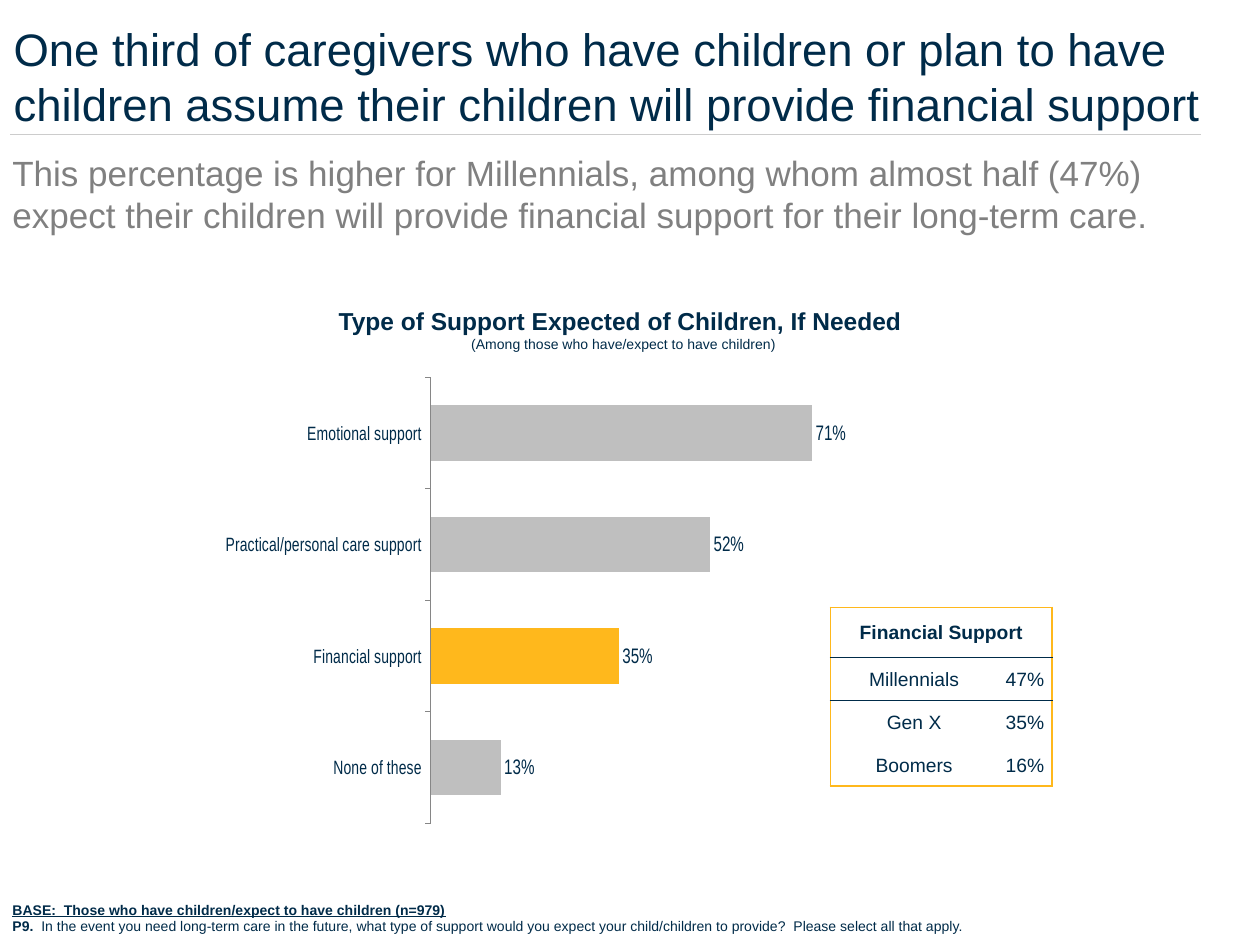
from dataclasses import dataclass

from lxml import etree
from pptx import Presentation
from pptx.chart.data import CategoryChartData
from pptx.dml.color import RGBColor
from pptx.enum.chart import XL_CHART_TYPE, XL_LABEL_POSITION, XL_TICK_MARK
from pptx.enum.shapes import MSO_CONNECTOR
from pptx.enum.text import MSO_ANCHOR, MSO_AUTO_SIZE, PP_ALIGN
from pptx.oxml.ns import qn
from pptx.util import Inches, Pt

NAVY = RGBColor(0x00, 0x2B, 0x49)
GOLD = RGBColor(0xFF, 0xB8, 0x1C)
GREY = RGBColor(0x80, 0x80, 0x80)
SILVER = RGBColor(0xBF, 0xBF, 0xBF)
RULE = RGBColor(0xCC, 0xCC, 0xCC)
AXIS = RGBColor(0x86, 0x86, 0x86)
LEFT = PP_ALIGN.LEFT
CENTER = PP_ALIGN.CENTER
MIDDLE = MSO_ANCHOR.MIDDLE
GROW = MSO_AUTO_SIZE.SHAPE_TO_FIT_TEXT
BAR = XL_CHART_TYPE.BAR_CLUSTERED
OUTER = XL_LABEL_POSITION.OUTSIDE_END
TICK_OUT = XL_TICK_MARK.OUTSIDE
TICK_NONE = XL_TICK_MARK.NONE
STRAIGHT = MSO_CONNECTOR.STRAIGHT
FONT = "Arial"


@dataclass
class Run:
    text: str
    size: float
    color: RGBColor = NAVY
    bold: bool = False
    under: bool = False


@dataclass
class Box:
    left: float
    top: float
    width: float
    height: float
    lines: list[list[Run]]
    align: PP_ALIGN = LEFT


BOXES = [
    Box(0.01, 0.11, 10, 0.98, [[Run(
        "One third of caregivers who have children or plan to have children "
        "assume their children will provide financial support", 26)]]),
    Box(0, 1.15, 9.53, 0.77, [[Run(
        "This percentage is higher for Millennials, among whom almost half (47%) "
        "expect their children will provide financial support for their "
        "long-term care.", 20, GREY)]]),
    Box(2.39, 2.38, 5.12, 0.47, [
        [Run("Type of Support Expected of Children, If Needed ", 14, bold=True)],
        [Run("(Among those who have/expect to have children)", 8)],
    ], CENTER),
    Box(0, 7.1, 9.25, 0.37, [
        [Run("BASE:  Those who have children/expect to have children (n=979)",
             8, bold=True, under=True)],
        [Run("P9.  ", 8, bold=True),
         Run("In the event you need long-term care in the future, what type of "
             "support would you expect your child/children to provide?  Please "
             "select all that apply.", 8)],
    ]),
]
SUPPORT = {
    "None of these": 0.13,
    "Financial support": 0.35,
    "Practical/personal care support": 0.52,
    "Emotional support": 0.71,
}
FOCUS = 1
ROWS = [("Financial Support", ""), ("Millennials", "47%"),
        ("Gen X", "35%"), ("Boomers", "16%")]
COLS = [1.33, 0.43]
TALL = [0.4, 0.34, 0.34, 0.34]


def style(font, size: float, color: RGBColor = NAVY, bold: bool = False) -> None:
    font.name = FONT
    font.size = Pt(size)
    font.bold = bold
    font.color.rgb = color


def draw_box(slide, box: Box) -> None:
    shape = slide.shapes.add_textbox(
        Inches(box.left), Inches(box.top), Inches(box.width), Inches(box.height))
    frame = shape.text_frame
    frame.word_wrap = True
    frame.auto_size = GROW
    frame.vertical_anchor = MIDDLE
    for i, line in enumerate(box.lines):
        para = frame.add_paragraph() if i else frame.paragraphs[0]
        para.alignment = box.align
        for item in line:
            run = para.add_run()
            run.text = item.text
            style(run.font, item.size, item.color, item.bold)
            run.font.underline = item.under


def draw_rule(slide) -> None:
    rule = slide.shapes.add_connector(
        STRAIGHT, Inches(0.08), Inches(1.07), Inches(9.53), Inches(1.07))
    rule.line.color.rgb = RULE
    rule.line.width = Pt(0.75)
    etree.SubElement(rule._element.spPr, qn("a:effectLst"))


def draw_chart(slide) -> None:
    data = CategoryChartData(number_format="0%")
    data.categories = list(SUPPORT)
    data.add_series("Series 1", list(SUPPORT.values()))
    chart = slide.shapes.add_chart(
        BAR, Inches(1.79), Inches(2.99), Inches(5.89), Inches(3.58), data).chart
    chart.has_legend = False
    chart.has_title = False
    style(chart.font, 18)

    cat = chart.category_axis
    cat.major_tick_mark = TICK_OUT
    cat.minor_tick_mark = TICK_NONE
    cat.has_major_gridlines = False
    cat.format.line.color.rgb = AXIS
    style(cat.tick_labels.font, 11)
    val = chart.value_axis
    val.minimum_scale = 0
    val.maximum_scale = 1
    val.has_major_gridlines = False
    val.visible = False

    plot = chart.plots[0]
    plot.gap_width = 100
    plot.vary_by_categories = False
    bars = plot.series[0]
    bars.format.fill.solid()
    bars.format.fill.fore_color.rgb = SILVER
    fill = bars.points[FOCUS].format.fill
    fill.solid()
    fill.fore_color.rgb = GOLD
    tags = bars.data_labels
    tags.show_value = True
    tags.number_format = "0%"
    tags.number_format_is_linked = False
    tags.position = OUTER
    style(tags.font, 12)

    area = chart._chartSpace.chart.plotArea
    for old in area.findall(qn("c:layout")):
        area.remove(old)
    layout = etree.Element(qn("c:layout"))
    area.insert(0, layout)
    manual = etree.SubElement(layout, qn("c:manualLayout"))
    parts = {"layoutTarget": "inner", "xMode": "edge", "yMode": "edge",
             "x": "0.16", "y": "0", "w": "1", "h": "0.99"}
    for name, value in parts.items():
        etree.SubElement(manual, qn(f"c:{name}")).set("val", value)


def set_edge(cell, side: str, color: RGBColor | None) -> None:
    edge = etree.SubElement(cell._tc.get_or_add_tcPr(), qn(f"a:ln{side}"))
    if color is None:
        etree.SubElement(edge, qn("a:noFill"))
        return
    edge.set("w", str(Pt(1)))
    fill = etree.SubElement(edge, qn("a:solidFill"))
    etree.SubElement(fill, qn("a:srgbClr")).set("val", str(color))


def draw_table(slide) -> None:
    grid = slide.shapes.add_table(
        len(ROWS), len(COLS), Inches(6.59), Inches(4.82),
        Inches(sum(COLS)), Inches(sum(TALL))).table
    grid.horz_banding = False
    for col, width in zip(grid.columns, COLS):
        col.width = Inches(width)
    for row, height in zip(grid.rows, TALL):
        row.height = Inches(height)
    grid.cell(0, 0).merge(grid.cell(0, 1))
    inner = [GOLD, NAVY, NAVY, None, GOLD]
    for r, row in enumerate(ROWS):
        for c, text in enumerate(row):
            cell = grid.cell(r, c)
            set_edge(cell, "L", GOLD if c == 0 else None)
            set_edge(cell, "R", GOLD if c == 1 or r == 0 else None)
            set_edge(cell, "T", inner[r])
            set_edge(cell, "B", inner[r + 1])
            cell.fill.background()
            cell.vertical_anchor = MIDDLE
            cell.margin_left = cell.margin_right = cell.margin_top = Inches(0.01)
            cell.margin_bottom = 0
            if text:
                para = cell.text_frame.paragraphs[0]
                para.text = text
                para.alignment = CENTER
                style(para.runs[0].font, 11, bold=r == 0)


def main() -> None:
    deck = Presentation()
    deck.slide_width = Inches(10)
    deck.slide_height = Inches(7.5)
    slide = deck.slides.add_slide(deck.slide_layouts[6])
    for box in BOXES:
        draw_box(slide, box)
    draw_rule(slide)
    draw_chart(slide)
    draw_table(slide)
    deck.save("out.pptx")


if __name__ == "__main__":
    main()
